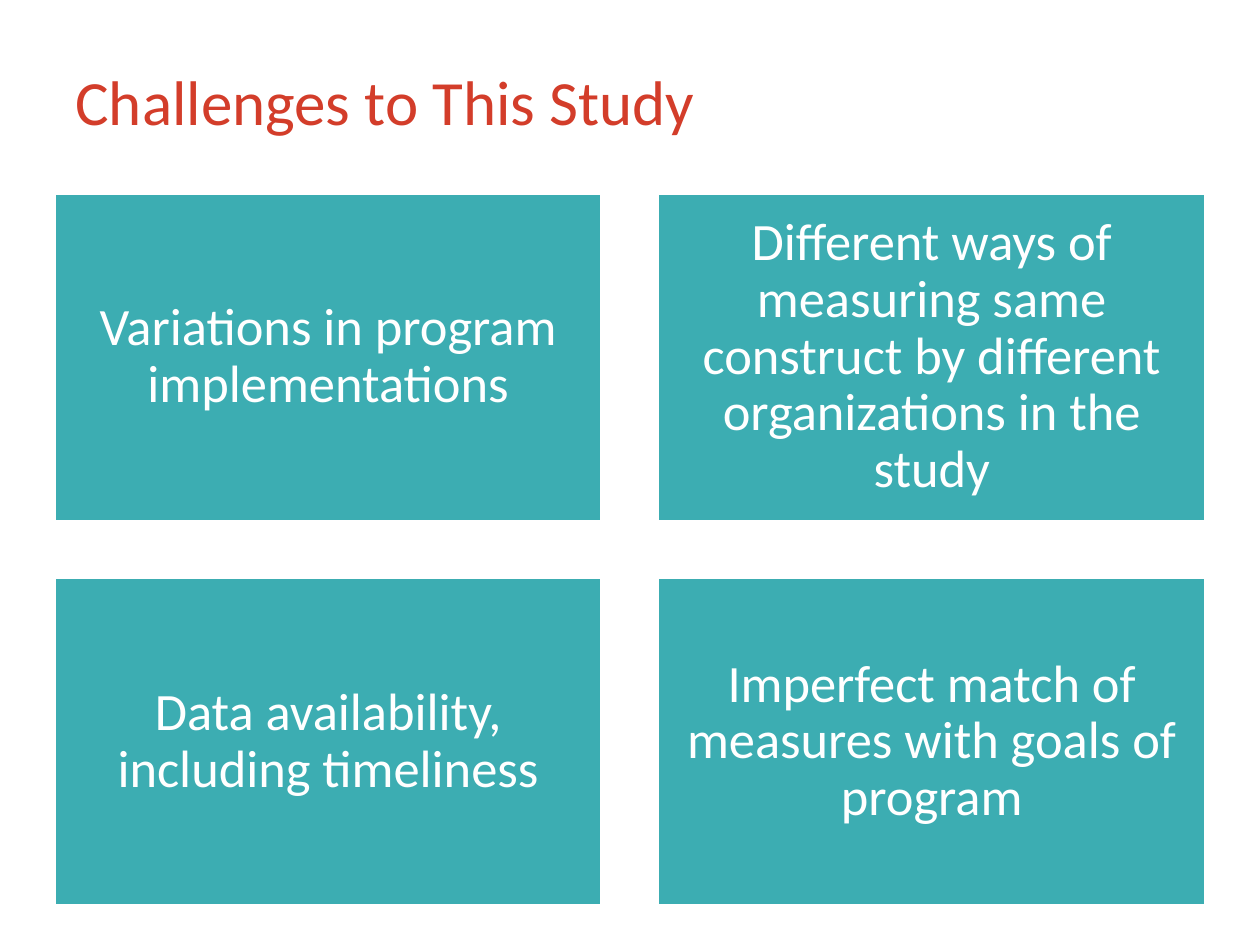
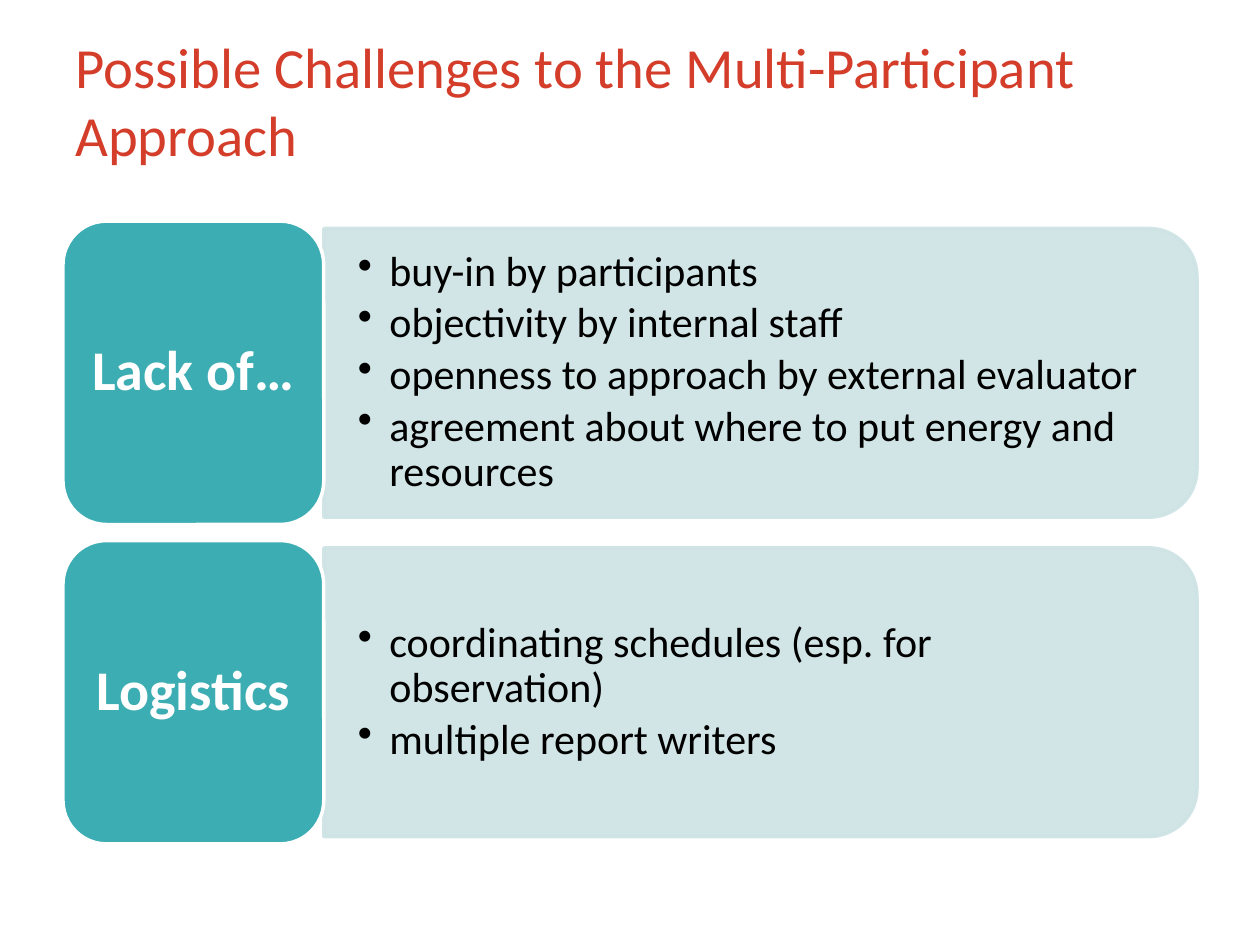
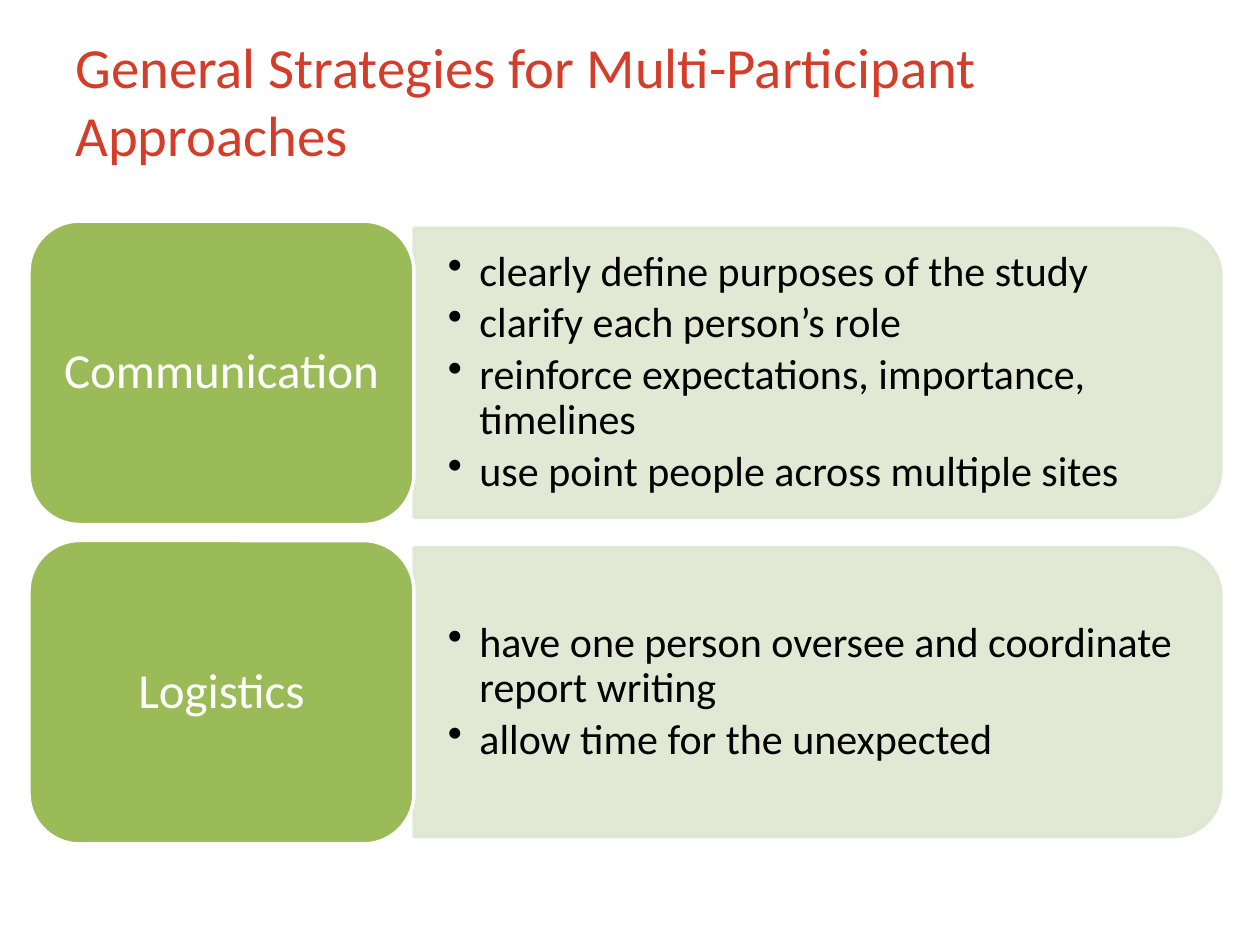
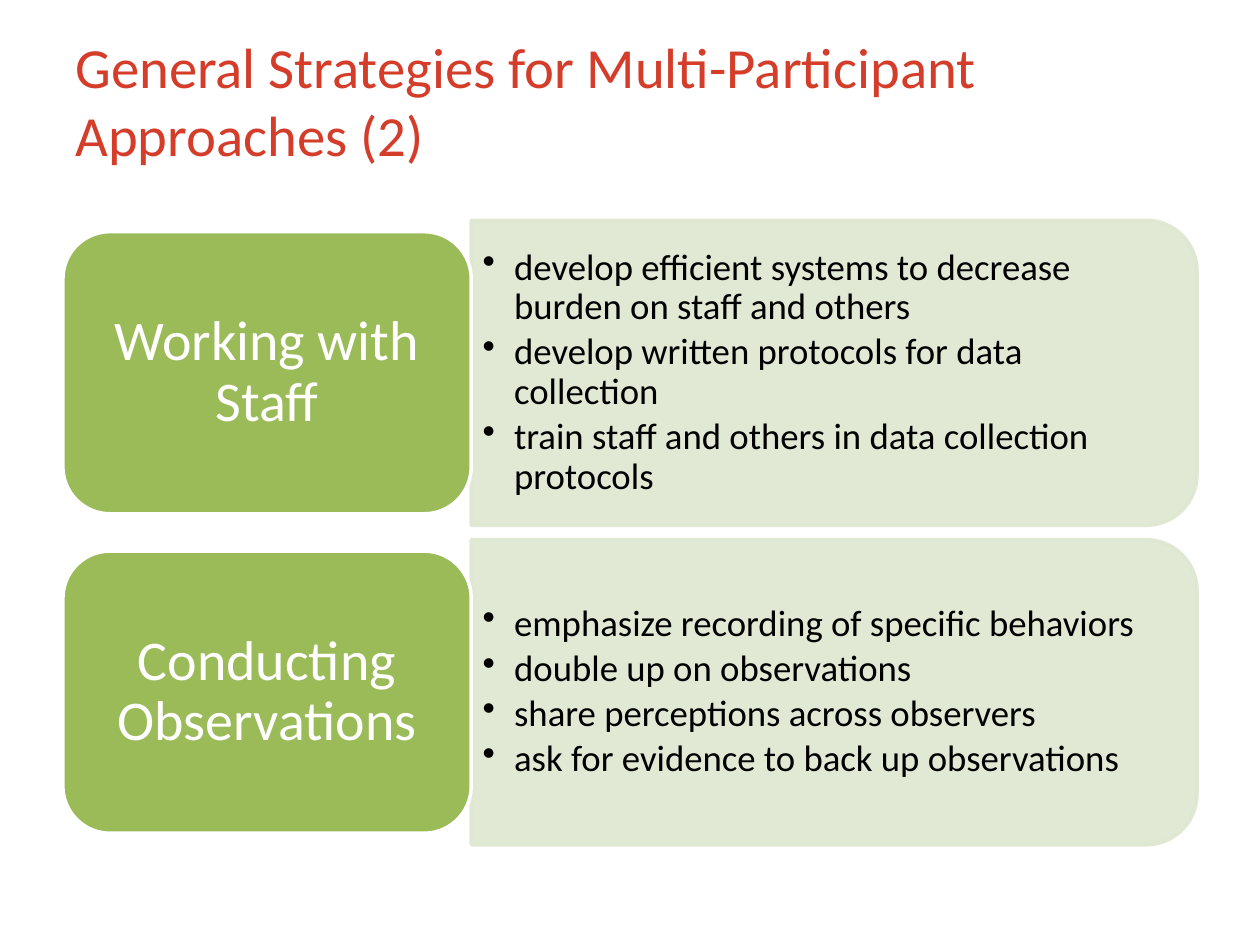
from collections import namedtuple

from pptx import Presentation
from pptx.dml.color import RGBColor
from pptx.enum.shapes import MSO_SHAPE
from pptx.enum.text import MSO_ANCHOR, PP_ALIGN
from pptx.oxml.ns import qn
from pptx.oxml.xmlchemy import OxmlElement
from pptx.util import Inches, Pt

Box = namedtuple("Box", "left top width height")

WIDE, HIGH = 10, 7.5
FONT = "Calibri"
COLORS = {
    "title": "D33D2A",
    "teal": "3CADB2",
    "mist": "CEE3E4",
    "green": "9BBB59",
    "sage": "DEE7D1",
    "white": "FFFFFF",
    "black": "000000",
}
HEAD = Box(0.05 * WIDE, 0.04 * HIGH, 0.9 * WIDE, 0.132 * HIGH)
CARDS = Box(0.043 * WIDE, 0.204 * HIGH, 0.914 * WIDE, 0.755 * HIGH)
GAP = 0.044 * WIDE
ROWS = Box(0.05 * WIDE, 0.2255 * HIGH, 0.9 * WIDE, 0.676 * HIGH)
BROAD = ROWS._replace(left=0.023 * WIDE, width=0.946 * WIDE)


def color(name):
    return RGBColor.from_string(COLORS[name])


def place(box):
    return [Inches(size) for size in box]


def grid(box, cols, rows, gap=0):
    """Split a box into equal cells, row by row."""
    width = (box.width - gap * (cols - 1)) / cols
    height = (box.height - gap * (rows - 1)) / rows
    return [Box(box.left + col * (width + gap), box.top + row * (height + gap),
                width, height)
            for row in range(rows) for col in range(cols)]


def middle(box, share):
    """Keep a share of the height, centred in the box."""
    height = box.height * share
    return box._replace(top=box.top + (box.height - height) / 2, height=height)


def add_form(slide, kind, box, fill, line):
    form = slide.shapes.add_shape(kind, *place(box))
    form.shadow.inherit = False
    form.fill.solid()
    form.fill.fore_color.rgb = color(fill)
    form.line.color.rgb = color(line)
    form.line.width = Pt(2)
    return form


def add_dot(para):
    props = para._p.get_or_add_pPr()
    props.set("marL", str(Inches(0.25)))
    props.set("indent", str(-Inches(0.25)))
    dot = OxmlElement("a:buChar")
    dot.set("char", "•")
    props.append(dot)


def write(shape, lines, size, ink, pad, align=PP_ALIGN.LEFT, bold=False,
          space=None, after=0, dots=False):
    frame = shape.text_frame
    frame.word_wrap = True
    frame.vertical_anchor = MSO_ANCHOR.MIDDLE
    frame.margin_left = frame.margin_right = Inches(pad[0])
    frame.margin_top = frame.margin_bottom = Inches(pad[1])
    frame.text = "\n".join(lines)
    for para in frame.paragraphs:
        para.alignment = align
        para.line_spacing = space
        para.space_after = Pt(size * after)
        if dots:
            add_dot(para)
        for run in para.runs:
            run.font.name = FONT
            run.font.size = Pt(size)
            run.font.bold = bold
            run.font.color.rgb = color(ink)


def add_label(form, text, size, pad, bold=False):
    write(form, [text], size, "white", pad, PP_ALIGN.CENTER, bold, 0.9, 0.35)


def start(deck, title, size=32.4):
    slide = deck.slides.add_slide(deck.slide_layouts[6])
    head = slide.shapes.add_textbox(*place(HEAD))
    write(head, [title], size, "title", (0.1, 0.05))
    return slide


# Grid of plain cards
def card_slide(deck, title, texts, box):
    slide = start(deck, title, 36)
    for text, cell in zip(texts, grid(box, 2, 2, GAP)):
        card = add_form(slide, MSO_SHAPE.RECTANGLE, cell, "teal", "white")
        add_label(card, text, 30, (0.12, 0.12))


# Pale panel, rounded on the right, with its points
def add_panel(slide, box, tint, points, size, pad):
    turned = Box(box.left + (box.width - box.height) / 2,
                 box.top + (box.height - box.width) / 2,
                 box.height, box.width)
    panel = add_form(slide, MSO_SHAPE.ROUND_2_SAME_RECTANGLE, turned, tint, tint)
    panel.rotation = 90
    for tone in panel._element.spPr.iter(qn("a:srgbClr")):
        alpha = OxmlElement("a:alpha")
        alpha.set("val", "90000")
        tone.append(alpha)
    edge = 0.049 * box.height
    area = Box(box.left, box.top + edge, box.width - edge, box.height - 2 * edge)
    write(slide.shapes.add_textbox(*place(area)), points, size, "black", pad,
          space=0.9, after=0.15, dots=True)


# Rows of a label and its panel
def row_slide(deck, title, items, box, share, hues, label=32, bold=False,
              size=24, pad=(0.27, 0.14), heights=(0.95, 0.904)):
    slide = start(deck, title)
    fill, tint = hues
    for (name, points), row in zip(items, grid(box, 1, len(items))):
        split = row.width * share
        side = row._replace(left=row.left + split, width=row.width - split)
        add_panel(slide, middle(side, heights[1]), tint, points, size, pad)
        tab = add_form(slide, MSO_SHAPE.ROUNDED_RECTANGLE,
                       middle(row._replace(width=split), heights[0]),
                       fill, "white")
        add_label(tab, name, label, (0.13, 0.07), bold)


def main():
    deck = Presentation()
    deck.slide_width, deck.slide_height = Inches(WIDE), Inches(HIGH)

    card_slide(deck, "Challenges to This Study", [
        "Variations in program implementations",
        "Different ways of measuring same construct by different "
        "organizations in the study",
        "Data availability, including timeliness",
        "Imperfect match of measures with goals of program",
    ], CARDS)

    row_slide(deck, "Possible Challenges to the Multi-Participant Approach", [
        ("Lack of…", ["buy-in by participants",
                      "objectivity by internal staff",
                      "openness to approach by external evaluator",
                      "agreement about where to put energy and resources"]),
        ("Logistics", ["coordinating schedules (esp. for observation)",
                       "multiple report writers"]),
    ], ROWS, 0.23, ("teal", "mist"), bold=True)

    plan = "General Strategies for Multi-Participant Approaches"
    row_slide(deck, plan, [
        ("Communication", ["clearly define purposes of the study",
                           "clarify each person’s role",
                           "reinforce expectations, importance, timelines",
                           "use point people across multiple sites"]),
        ("Logistics", ["have one person oversee and coordinate report writing",
                       "allow time for the unexpected"]),
    ], BROAD, 0.323, ("green", "sage"), label=28)

    row_slide(deck, plan + " (2)", [
        ("Working with Staff", [
            "develop efficient systems to decrease burden on staff and others",
            "develop written protocols for data collection",
            "train staff and others in data collection protocols"]),
        ("Conducting Observations", [
            "emphasize recording of specific behaviors",
            "double up on observations",
            "share perceptions across observers",
            "ask for evidence to back up observations"]),
    ], ROWS, 0.36, ("green", "sage"), size=21, pad=(0.09, 0.04),
        heights=(0.883, 0.955))

    deck.save("out.pptx")


if __name__ == "__main__":
    main()
